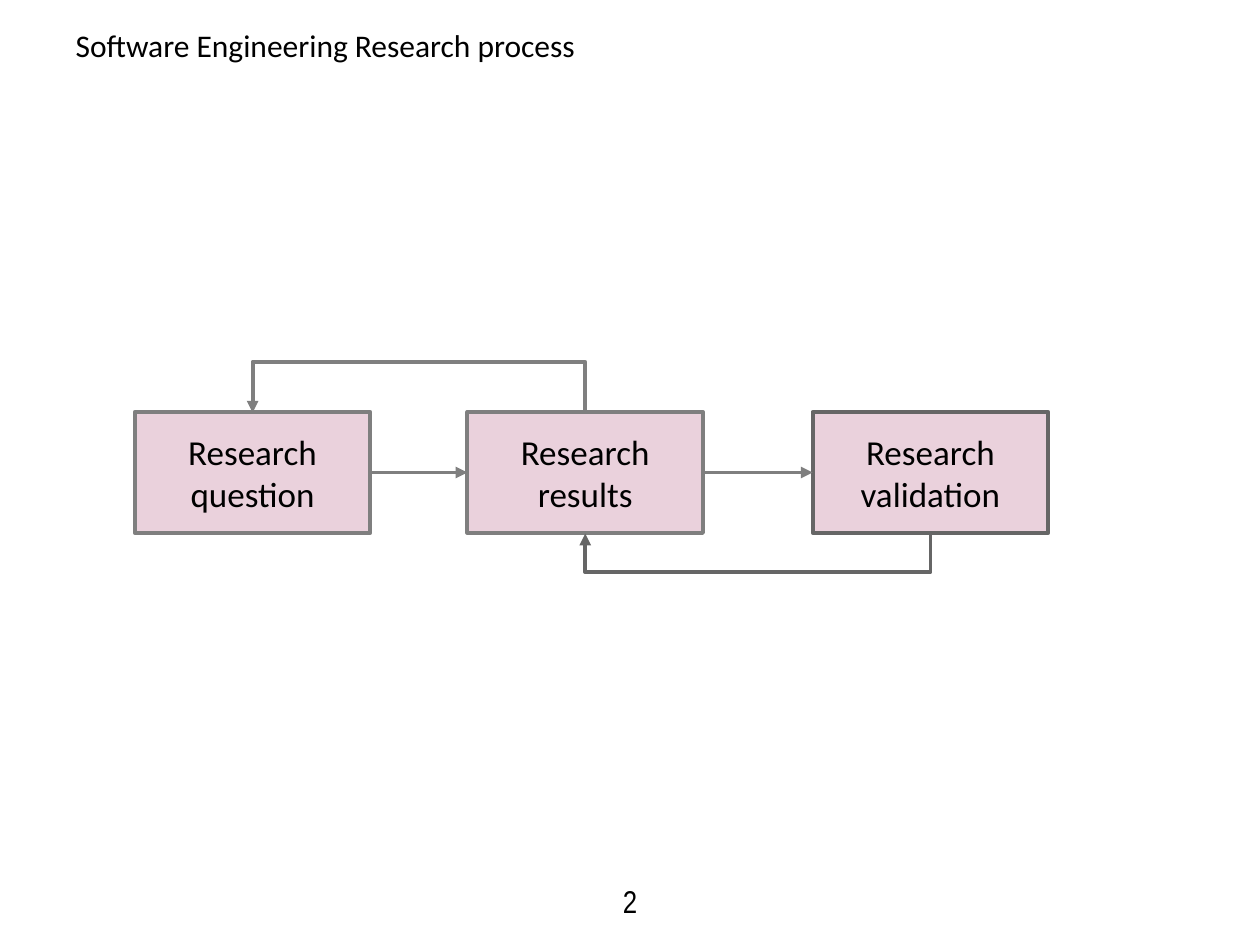
"""Build a slide showing the software engineering research process."""
from dataclasses import dataclass

from lxml import etree
from pptx import Presentation
from pptx import util as u
from pptx.dml.color import RGBColor
from pptx.enum import shapes, text
from pptx.oxml.ns import qn


@dataclass(frozen=True)
class Theme:
    ink: str = "000000"
    fill: str = "EAD1DC"
    grey: str = "7F7F7F"
    dark: str = "666666"
    font: str = "Calibri"
    number_font: str = "Arial Narrow"
    small: int = 18
    large: int = 20
    line: float = 2.25


@dataclass(frozen=True)
class Stage:
    label: str
    left: float
    color: str

    @property
    def right(self) -> float:
        return self.left + STAGE_WIDTH

    @property
    def center(self) -> float:
        return self.left + STAGE_WIDTH / 2


@dataclass(frozen=True)
class Feedback:
    source: Stage
    target: Stage
    edge: float
    reach: float


THEME = Theme()
WIDTH, HEIGHT = 10, 7.5
STAGE_WIDTH, STAGE_HEIGHT = 1.87, 0.96
STAGE_TOP = 3.27
STAGE_BOTTOM = STAGE_TOP + STAGE_HEIGHT
LOOP_DEPTH = 0.01
STAGES = (
    Stage("Research question", 1.07, THEME.grey),
    Stage("Research results", 3.71, THEME.grey),
    Stage("Research validation", 6.45, THEME.dark),
)
QUESTION, RESULTS, VALIDATION = STAGES
FEEDBACKS = (
    Feedback(RESULTS, QUESTION, STAGE_TOP, -0.4),
    Feedback(VALIDATION, RESULTS, STAGE_BOTTOM, 0.32),
)


def write(box, content: str, *, size: int, font: str = THEME.font,
          align=text.PP_ALIGN.CENTER, anchor=text.MSO_ANCHOR.MIDDLE,
          inset: tuple[float, float] = (0.1, 0.1)) -> None:
    frame = box.text_frame
    frame.word_wrap = True
    frame.auto_size = text.MSO_AUTO_SIZE.NONE
    frame.vertical_anchor = anchor
    frame.margin_left = frame.margin_right = u.Inches(inset[0])
    frame.margin_top = frame.margin_bottom = u.Inches(inset[1])
    para = frame.paragraphs[0]
    para.alignment = align
    span = para.add_run()
    span.text = content
    span.font.name = font
    span.font.size = u.Pt(size)
    span.font.color.rgb = RGBColor.from_string(THEME.ink)


def add_title(page, content: str) -> None:
    title = page.shapes.title
    title.left, title.top = u.Inches(0.05 * WIDTH), u.Inches(0.16)
    title.width, title.height = u.Inches(0.9 * WIDTH), u.Inches(0.56)
    write(title, content, size=THEME.small, align=text.PP_ALIGN.LEFT,
          anchor=text.MSO_ANCHOR.TOP, inset=(0.1, 0.05))


def add_number(page, content: str) -> None:
    width = 1.08
    box = page.shapes.add_textbox(u.Inches((WIDTH - width) / 2), u.Inches(6.95),
                                  u.Inches(width), u.Inches(0.4))
    write(box, content, size=THEME.small, font=THEME.number_font, inset=(0.07, 0.04))


def add_stage(page, stage: Stage) -> None:
    box = page.shapes.add_shape(
        shapes.MSO_SHAPE.RECTANGLE, u.Inches(stage.left), u.Inches(STAGE_TOP),
        u.Inches(STAGE_WIDTH), u.Inches(STAGE_HEIGHT))
    box.shadow.inherit = False
    box.fill.solid()
    box.fill.fore_color.rgb = RGBColor.from_string(THEME.fill)
    box.line.color.rgb = RGBColor.from_string(stage.color)
    box.line.width = u.Pt(THEME.line)
    write(box, stage.label, size=THEME.large)


def add_arrow(page, kind, start: tuple[float, float], end: tuple[float, float],
              color: str):
    arrow = page.shapes.add_connector(kind, *map(u.Inches, start + end))
    arrow.line.color.rgb = RGBColor.from_string(color)
    arrow.line.width = u.Pt(THEME.line)
    properties = arrow._element.spPr
    etree.SubElement(properties.find(qn("a:ln")), qn("a:tailEnd"), type="triangle")
    etree.SubElement(properties, qn("a:effectLst"))
    return arrow


def add_feedback(page, loop: Feedback) -> None:
    span = loop.source.center - loop.target.center
    middle = (loop.source.center + loop.target.center) / 2
    start = (middle - LOOP_DEPTH / 2, loop.edge - span / 2)
    end = (middle + LOOP_DEPTH / 2, loop.edge + span / 2)
    arrow = add_arrow(page, shapes.MSO_CONNECTOR.ELBOW, start, end, loop.source.color)
    properties = arrow._element.spPr
    properties.find(qn("a:xfrm")).set("rot", str(90 * 60000))
    geometry = properties.find(qn("a:prstGeom"))
    guides = geometry.find(qn("a:avLst"))
    if guides is None:
        guides = etree.SubElement(geometry, qn("a:avLst"))
    bend = round(loop.reach / LOOP_DEPTH * 100000)
    etree.SubElement(guides, qn("a:gd"), name="adj1", fmla=f"val {bend}")


def main() -> None:
    deck = Presentation()
    deck.slide_width, deck.slide_height = u.Inches(WIDTH), u.Inches(HEIGHT)
    page = deck.slides.add_slide(deck.slide_layouts[5])
    add_number(page, "2")
    add_title(page, "Software Engineering Research process")
    for stage in STAGES:
        add_stage(page, stage)
    middle = STAGE_TOP + STAGE_HEIGHT / 2
    for before, after in zip(STAGES, STAGES[1:]):
        add_arrow(page, shapes.MSO_CONNECTOR.STRAIGHT, (before.right, middle),
                  (after.left, middle), THEME.grey)
    for loop in FEEDBACKS:
        add_feedback(page, loop)
    deck.save("out.pptx")


if __name__ == "__main__":
    main()
